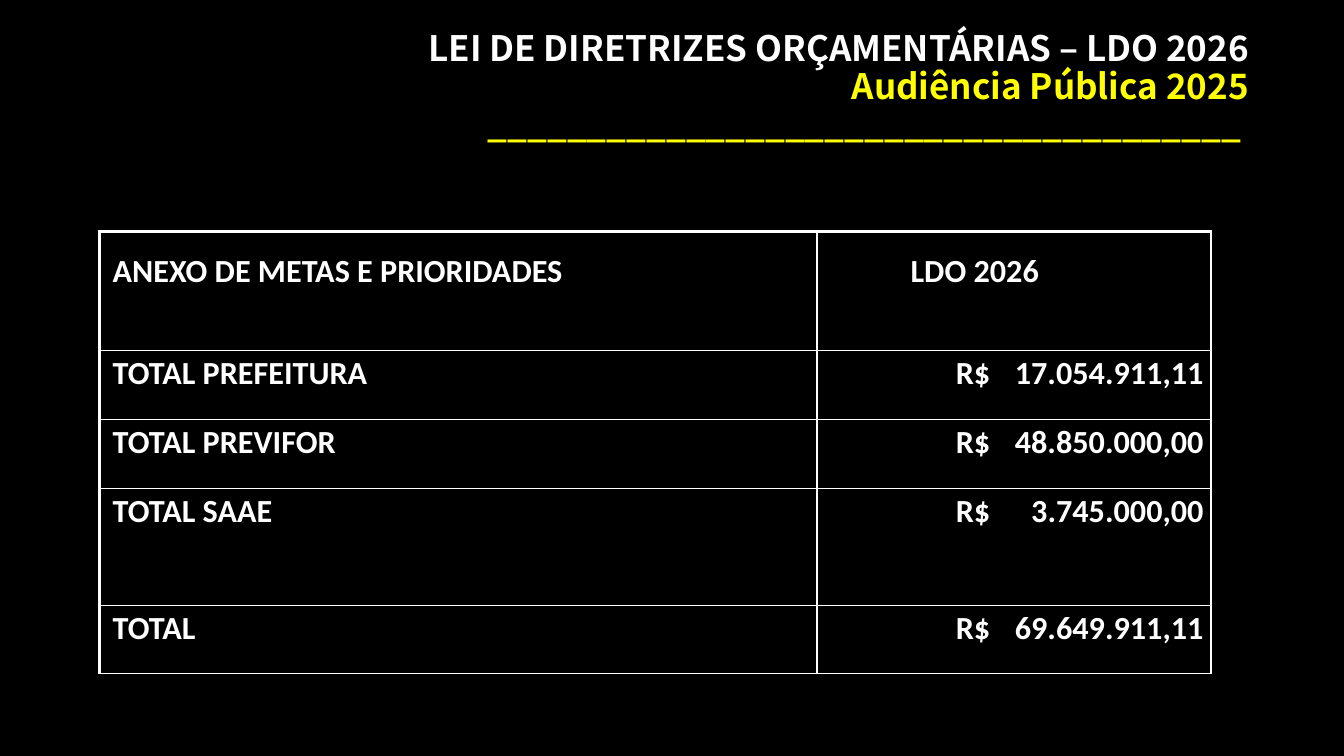
import pptx
import pptx.dml.color
import pptx.enum.text
import pptx.oxml
import pptx.oxml.ns
import pptx.util

Cm = pptx.util.Cm
Pt = pptx.util.Pt
RGBColor = pptx.dml.color.RGBColor
PP_ALIGN = pptx.enum.text.PP_ALIGN
MSO_ANCHOR = pptx.enum.text.MSO_ANCHOR

BLACK = RGBColor(0x00, 0x00, 0x00)
WHITE = RGBColor(0xFF, 0xFF, 0xFF)
YELLOW = RGBColor(0xFF, 0xFF, 0x00)

TITLE_FONT = "Noto Sans CJK JP"
TABLE_FONT = "Calibri"
LABEL_INDENT = Cm(0.33)
HEADER_INDENT = Cm(2.36)
VALUE_INDENT = Cm(3.5)
VALUE_TAB = Cm(6.25)

TITLE_LINES = [
    ("LEI DE DIRETRIZES ORÇAMENTÁRIAS – LDO 2026", WHITE),
    ("Audiência Pública 2025", YELLOW),
    ("_" * 38 + " ", YELLOW),
]
COLUMN_WIDTHS = [18.08, 9.93]
ROWS = [
    (3.0, "ANEXO DE METAS E PRIORIDADES", "LDO 2026"),
    (1.73, "TOTAL PREFEITURA", "R$\t17.054.911,11"),
    (1.73, "TOTAL PREVIFOR", "R$\t48.850.000,00"),
    (2.95, "TOTAL SAAE", "R$\t3.745.000,00"),
    (1.73, "TOTAL", "R$\t69.649.911,11"),
]


def add_run(p, text, font, size, color):
    r = p.add_run()
    r.text = text
    r.font.name = font
    r.font.size = Pt(size)
    r.font.bold = True
    r.font.color.rgb = color


def fill_title(sp):
    sp.left, sp.top, sp.width, sp.height = Cm(2.51), Cm(0.86), Cm(29.21), Cm(3.68)
    tf = sp.text_frame
    tf.word_wrap = True
    tf.auto_size = pptx.enum.text.MSO_AUTO_SIZE.NONE
    tf.vertical_anchor = MSO_ANCHOR.MIDDLE
    tf.margin_top, tf.margin_bottom = 0, Cm(0.97)
    p = tf.paragraphs[0]
    p.alignment = PP_ALIGN.RIGHT
    p.line_spacing = 0.9
    for i, (text, color) in enumerate(TITLE_LINES):
        if i:
            p.add_line_break()
        add_run(p, text, TITLE_FONT, 25, color)


def set_border(cell, side, width):
    tcPr = cell._tc.get_or_add_tcPr()
    tcPr.append(pptx.oxml.parse_xml(
        f'<a:{side} {pptx.oxml.ns.nsdecls("a")} w="{Pt(width)}">'
        f'<a:solidFill><a:srgbClr val="{WHITE}"/></a:solidFill></a:{side}>'))


def add_right_tab(p, position):
    p._p.get_or_add_pPr().append(pptx.oxml.parse_xml(
        f'<a:tabLst {pptx.oxml.ns.nsdecls("a")}>'
        f'<a:tab pos="{position}" algn="r"/></a:tabLst>'))


def fill_cell(cell, text, indent, is_header, is_first_column):
    cell.margin_left = indent
    cell.margin_right = cell.margin_bottom = 0
    cell.margin_top = Cm(0.5 if is_header else 0.08)
    cell.vertical_anchor = MSO_ANCHOR.TOP
    set_border(cell, "lnL", 2.25 if is_first_column else 1)
    set_border(cell, "lnR", 1)
    set_border(cell, "lnT", 2.25 if is_header else 1)
    set_border(cell, "lnB", 1)
    cell.fill.background()
    p = cell.text_frame.paragraphs[0]
    p.alignment = PP_ALIGN.LEFT
    if "\t" in text:
        add_right_tab(p, VALUE_TAB)
    add_run(p, text, TABLE_FONT, 23, WHITE)


def add_goals_table(s):
    width, height = sum(COLUMN_WIDTHS), sum(row[0] for row in ROWS)
    table = s.shapes.add_table(len(ROWS), len(COLUMN_WIDTHS), Cm(2.51), Cm(5.84),
                               Cm(width), Cm(height)).table
    table.first_row = table.horz_banding = False
    for column, column_width in zip(table.columns, COLUMN_WIDTHS):
        column.width = Cm(column_width)
    for i, (row_height, label, value) in enumerate(ROWS):
        is_header = i == 0
        table.rows[i].height = Cm(row_height)
        fill_cell(table.cell(i, 0), label, LABEL_INDENT, is_header, True)
        value_indent = HEADER_INDENT if is_header else VALUE_INDENT
        fill_cell(table.cell(i, 1), value, value_indent, is_header, False)


def main():
    prs = pptx.Presentation()
    prs.slide_width, prs.slide_height = Cm(33.87), Cm(19.05)
    s = prs.slides.add_slide(prs.slide_layouts[5])
    s.background.fill.solid()
    s.background.fill.fore_color.rgb = BLACK
    fill_title(s.shapes.title)
    add_goals_table(s)
    prs.save("out.pptx")


if __name__ == "__main__":
    main()
